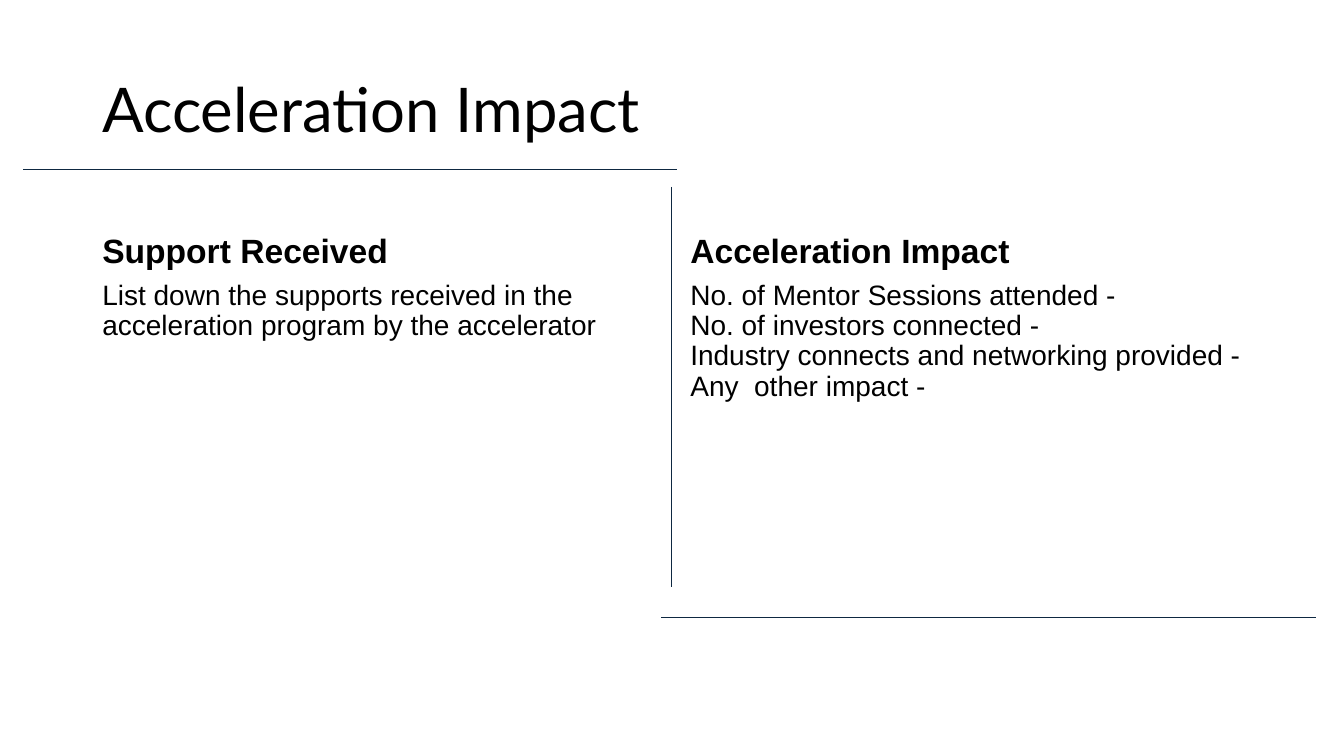
"""Build the Acceleration Impact slide: a title and two headed columns set off by thin rules."""
from dataclasses import dataclass

from lxml.etree import SubElement
from pptx import Presentation
from pptx.dml.color import RGBColor
from pptx.enum.shapes import MSO_CONNECTOR as Connector
from pptx.enum.text import MSO_ANCHOR as Anchor
from pptx.oxml.ns import qn
from pptx.slide import Slide
from pptx.util import Emu, Pt

EMU_PER_PX = 9525


@dataclass(frozen=True)
class Theme:
    ink: RGBColor = RGBColor.from_string("000000")
    rule: RGBColor = RGBColor.from_string("0E2841")
    title_font: str = "Lato"
    body_font: str = "Arial"
    title_size: int = 44
    heading_size: int = 24
    body_size: int = 20
    rule_width: float = 0.75
    line_spacing: float = 0.9


@dataclass(frozen=True)
class TextStyle:
    font: str
    size: int
    anchor: Anchor
    bold: bool = False


@dataclass(frozen=True)
class Column:
    left: int
    width: int
    heading: str
    lines: tuple[str, ...]


@dataclass(frozen=True)
class Rule:
    x1: int
    y1: int
    x2: int
    y2: int


THEME = Theme()
TITLE = TextStyle(THEME.title_font, THEME.title_size, Anchor.MIDDLE)
HEADING = TextStyle(THEME.body_font, THEME.heading_size, Anchor.BOTTOM, bold=True)
BODY = TextStyle(THEME.body_font, THEME.body_size, Anchor.TOP)

MARGIN = 88
HEADING_TOP, HEADING_HEIGHT, BODY_HEIGHT = 177, 86, 387
COLUMNS = (
    Column(MARGIN, 541, "Support Received", (
        "List down the supports received in the acceleration program by the accelerator",
    )),
    Column(648, 544, "Acceleration Impact", (
        "No. of Mentor Sessions attended -",
        "No. of investors connected -",
        "Industry connects and networking provided -",
        "Any  other impact -",
    )),
)
RULES = (
    Rule(22, 161, 645, 161),
    Rule(630, 588, 1253, 588),
    Rule(640, 178, 640, 559),
)


def px(length: int) -> Emu:
    return Emu(length * EMU_PER_PX)


def add_text(page: Slide, left: int, top: int, width: int, height: int,
             lines: tuple[str, ...], style: TextStyle) -> None:
    box = page.shapes.add_textbox(px(left), px(top), px(width), px(height))
    frame = box.text_frame
    frame.word_wrap = True
    frame.vertical_anchor = style.anchor
    frame.text = "\n".join(lines)
    font_format = {"name": style.font, "size": Pt(style.size), "bold": style.bold}
    for para in frame.paragraphs:
        para.line_spacing = THEME.line_spacing
        for span in para.runs:
            for name, value in font_format.items():
                setattr(span.font, name, value)
            span.font.color.rgb = THEME.ink


def add_column(page: Slide, column: Column) -> None:
    add_text(page, column.left, HEADING_TOP, column.width, HEADING_HEIGHT,
             (column.heading,), HEADING)
    add_text(page, column.left, HEADING_TOP + HEADING_HEIGHT, column.width, BODY_HEIGHT,
             column.lines, BODY)


def add_rule(page: Slide, rule: Rule) -> None:
    line = page.shapes.add_connector(
        Connector.STRAIGHT, px(rule.x1), px(rule.y1), px(rule.x2), px(rule.y2))
    line.line.color.rgb = THEME.rule
    line.line.width = Pt(THEME.rule_width)
    SubElement(line._element.spPr, qn("a:effectLst"))


def main() -> None:
    deck = Presentation()
    deck.slide_width, deck.slide_height = px(1280), px(720)
    page = deck.slides.add_slide(deck.slide_layouts[6])
    add_text(page, MARGIN, 38, 1104, 139, ("Acceleration Impact",), TITLE)
    for column in COLUMNS:
        add_column(page, column)
    for rule in RULES:
        add_rule(page, rule)
    deck.save("out.pptx")


if __name__ == "__main__":
    main()
